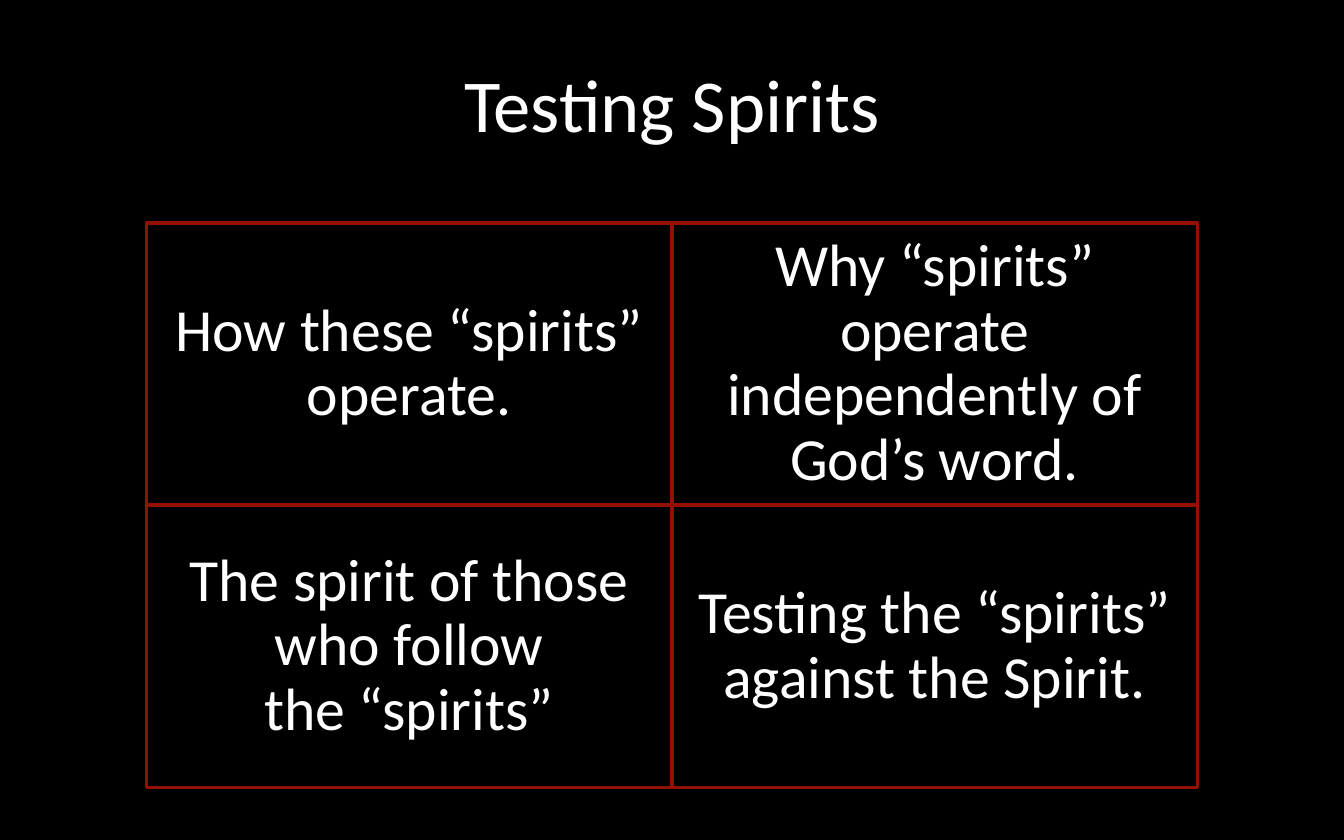
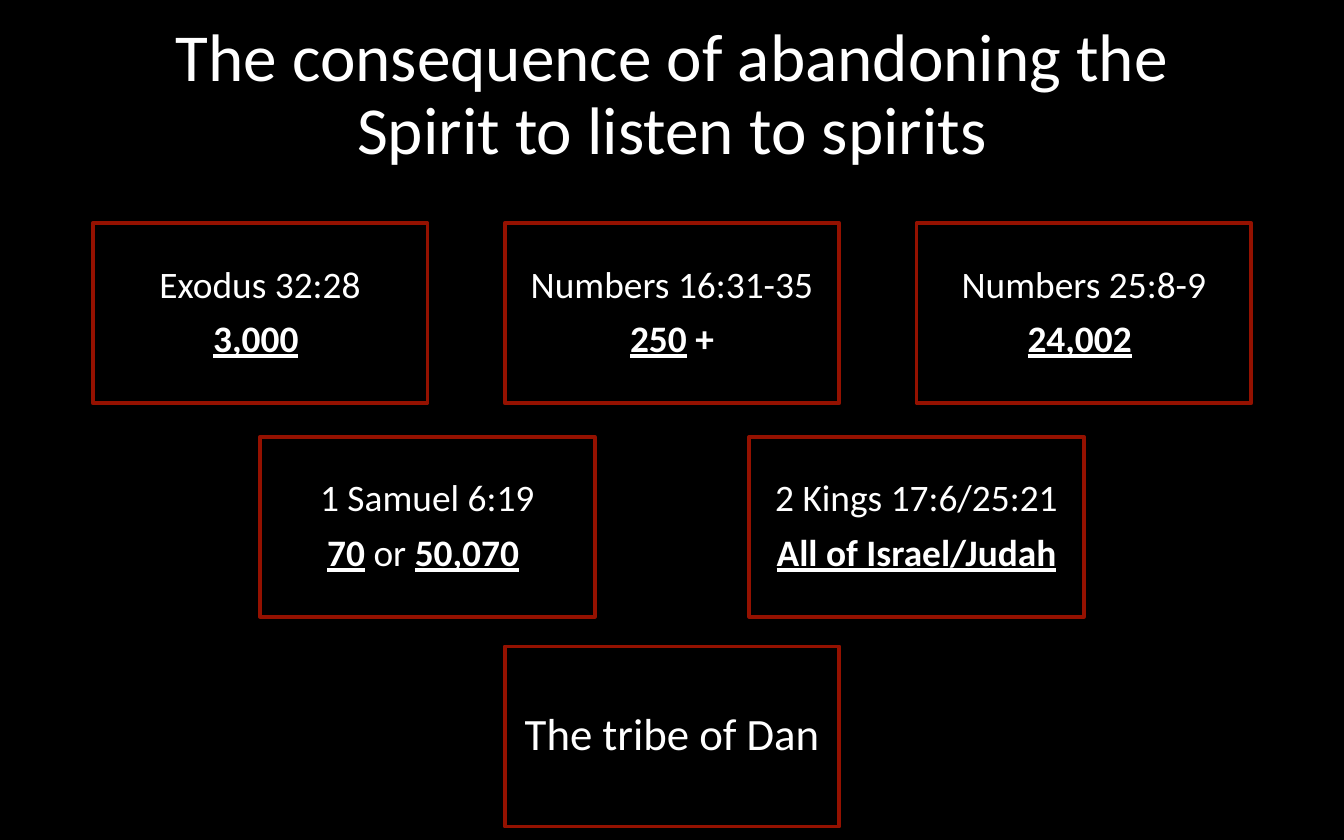
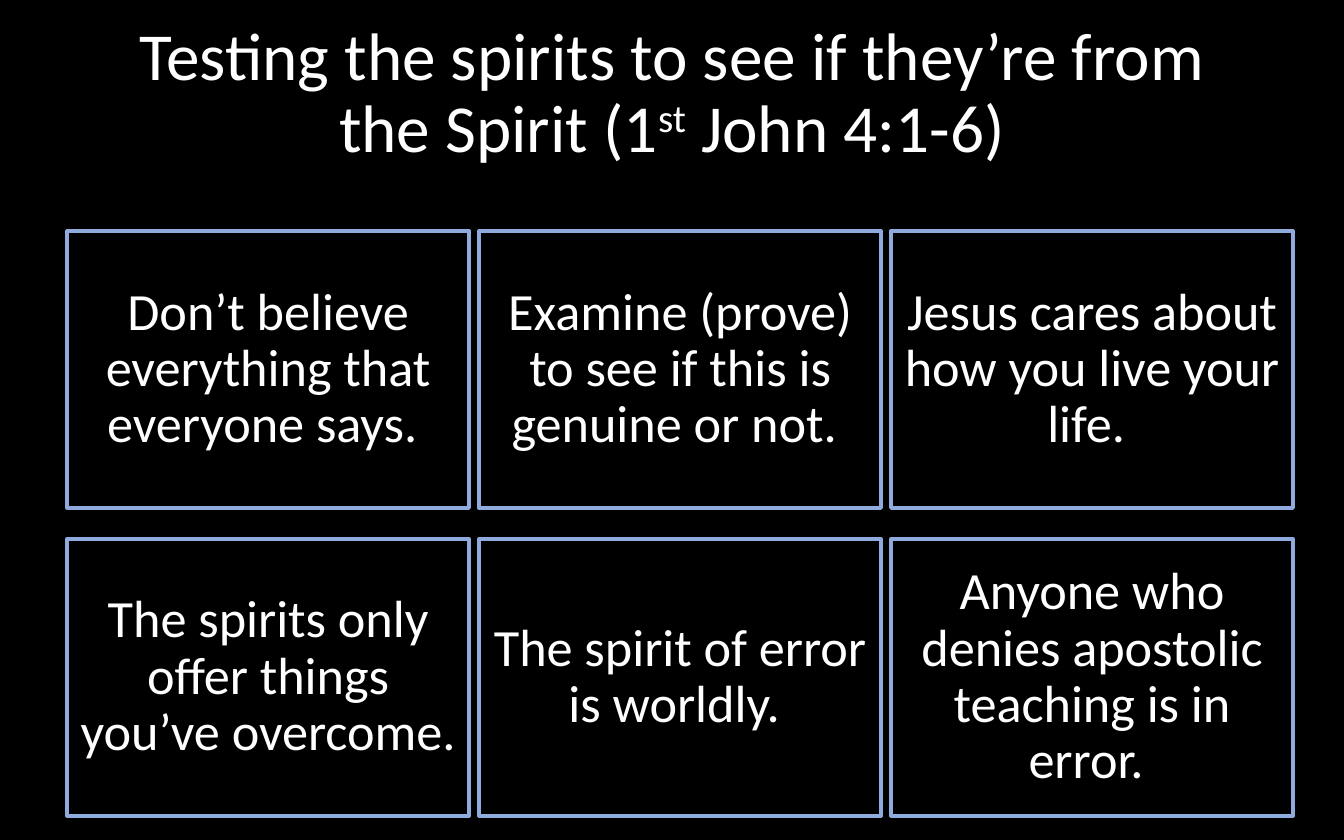
from dataclasses import dataclass

from pptx import Presentation
from pptx.dml.color import RGBColor as Color
from pptx.enum.shapes import MSO_SHAPE as Shape
from pptx.enum.text import MSO_ANCHOR as Anchor, PP_ALIGN as Align
from pptx.util import Inches, Pt


@dataclass(frozen=True)
class Theme:
    font: str = "Calibri"
    background: Color = Color(0, 0, 0)
    text: Color = Color(255, 255, 255)
    red: Color = Color(0x94, 0x11, 0x00)
    blue: Color = Color(0x8F, 0xAA, 0xDC)
    title: int = 40
    long_title: int = 36
    topic: int = 32
    test: int = 28
    tribe: int = 24
    verse: int = 20
    outline: int = 2
    line_spacing: float = 0.9
    space_before: float = 7.5


@dataclass(frozen=True)
class Styled:
    text: str
    bold: bool = False
    underline: bool = False
    raised: bool = False


def total(text):
    return Styled(text, bold=True, underline=True)


class Deck:
    GRID = 100
    TITLE_WIDTH, TITLE_HEIGHT = 86.2, 19.36
    INSET = Inches(0.08)

    def __init__(self, theme):
        self.theme = theme
        self.presentation = Presentation()
        self.presentation.slide_width = Inches(10)
        self.presentation.slide_height = Inches(6.25)
        self.slide = None

    def frame(self, left, top, width, height):
        column = self.presentation.slide_width / self.GRID
        row = self.presentation.slide_height / self.GRID
        return (round(left * column), round(top * row),
                round(width * column), round(height * row))

    def add_slide(self, title, size, top):
        layout = self.presentation.slide_layouts[6]
        self.slide = self.presentation.slides.add_slide(layout)
        fill = self.slide.background.fill
        fill.solid()
        fill.fore_color.rgb = self.theme.background
        left = (self.GRID - self.TITLE_WIDTH) / 2
        box = self.slide.shapes.add_textbox(
            *self.frame(left, top, self.TITLE_WIDTH, self.TITLE_HEIGHT))
        self.set_text(box, [title], size)

    def add_box_row(self, boxes, top, size, color, width, height, gap=0, center=50):
        pitch = width + gap
        left = center - (len(boxes) * pitch - gap) / 2
        for index, paragraphs in enumerate(boxes):
            shape = self.slide.shapes.add_shape(
                Shape.RECTANGLE,
                *self.frame(left + index * pitch, top, width, height))
            shape.shadow.inherit = False
            shape.fill.background()
            shape.line.color.rgb = color
            shape.line.width = Pt(self.theme.outline)
            self.set_text(shape, paragraphs, size)

    def set_text(self, shape, paragraphs, size):
        text_frame = shape.text_frame
        text_frame.word_wrap = True
        text_frame.vertical_anchor = Anchor.MIDDLE
        text_frame.margin_left = text_frame.margin_right = self.INSET
        for index, runs in enumerate(paragraphs):
            if index:
                paragraph = text_frame.add_paragraph()
                paragraph.space_before = Pt(self.theme.space_before)
            else:
                paragraph = text_frame.paragraphs[0]
            paragraph.alignment = Align.CENTER
            paragraph.line_spacing = self.theme.line_spacing
            for content in runs:
                self.add_run(paragraph, content, size)

    def add_run(self, paragraph, content, size):
        if content == "\n":
            paragraph.add_line_break()
            return
        styled = Styled(content) if isinstance(content, str) else content
        run = paragraph.add_run()
        run.text = styled.text
        run.font.name = self.theme.font
        run.font.size = Pt(size)
        run.font.color.rgb = self.theme.text
        run.font.bold = styled.bold
        run.font.underline = styled.underline
        if styled.raised:
            run._r.get_or_add_rPr().set("baseline", "30000")


def add_topics(deck):
    theme = deck.theme
    deck.add_slide(["Testing Spirits"], theme.title, top=3.2)
    first_top, height = 26.56, 33.6
    topics = [
        [[["How these “spirits” operate."]],
         [["Why “spirits” operate independently of God’s word."]]],
        [[["The spirit of those who follow", "\n", "the “spirits”"]],
         [["Testing the “spirits” against the Spirit."]]],
    ]
    for index, boxes in enumerate(topics):
        deck.add_box_row(boxes, first_top + index * height, theme.topic, theme.red,
                         width=39.1, height=height)


def add_consequences(deck):
    theme = deck.theme
    deck.add_slide(["The consequence of abandoning the Spirit to listen to spirits"],
                   theme.long_title, top=1.76)
    gap = 5.75
    rows = [
        (26.56, theme.verse, gap, [
            [["Exodus 32:28"], [total("3,000"), " "]],
            [["Numbers 16:31-35"], [total("250"), Styled(" +", bold=True)]],
            [["Numbers 25:8-9"], [total("24,002"), " "]],
        ]),
        (52, theme.verse, 2 * gap, [
            [["1 Samuel 6:19"], [total("70"), " or ", total("50,070"), " "]],
            [["2 Kings 17:6/25:21"], [total("All of Israel/Judah")]],
        ]),
        (76.96, theme.tribe, gap, [[["The tribe of Dan"]]]),
    ]
    for top, size, row_gap, boxes in rows:
        deck.add_box_row(boxes, top, size, theme.red,
                         width=24.9, height=21.44, gap=row_gap)


def add_tests(deck):
    theme = deck.theme
    deck.add_slide(["Testing the spirits to see if they’re from the Spirit (1",
                    Styled("st", raised=True), " John 4:1-6)"],
                   theme.long_title, top=1.6)
    rows = [
        (27.52, ["Don’t believe everything that everyone says. ",
                 "Examine (prove) to see if this is genuine or not. ",
                 "Jesus cares about how you live your life. "]),
        (64.16, ["The spirits only offer things you’ve overcome.",
                 "The spirit of error is worldly. ",
                 "Anyone who denies apostolic teaching is in error. "]),
    ]
    for top, tests in rows:
        deck.add_box_row([[[test]] for test in tests], top, theme.test, theme.blue,
                         width=29.9, height=32.96, gap=0.75, center=50.6)


def main():
    deck = Deck(Theme())
    add_topics(deck)
    add_consequences(deck)
    add_tests(deck)
    deck.presentation.save("out.pptx")


if __name__ == "__main__":
    main()
